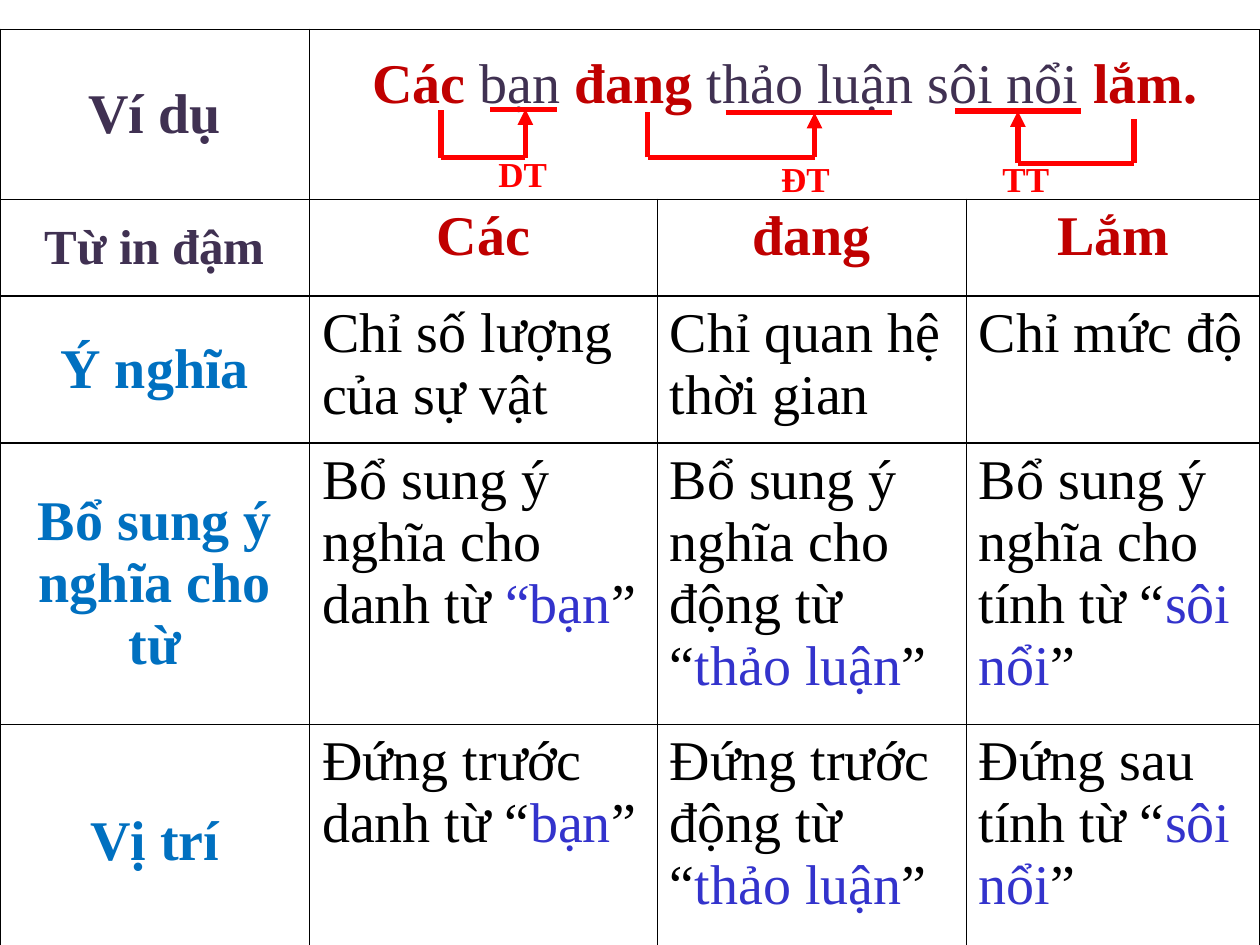
"""Build a slide with a Vietnamese grammar table and linked words in its example."""
from lxml import etree
from pptx import Presentation
from pptx.dml.color import RGBColor
from pptx.enum.shapes import MSO_CONNECTOR
from pptx.enum.text import MSO_ANCHOR, PP_ALIGN
from pptx.oxml.ns import qn
from pptx.util import Cm, Pt

STRAIGHT = MSO_CONNECTOR.STRAIGHT
MIDDLE, TOP = MSO_ANCHOR.MIDDLE, MSO_ANCHOR.TOP
CENTER, LEFT = PP_ALIGN.CENTER, PP_ALIGN.LEFT
FONT = "Times New Roman"
PURPLE, RED, BLUE = "403152", "C00000", "0070C0"
BLACK, QUOTE, MARK = "000000", "3333CC", "FF0000"

COLS = [6.24, 7.01, 6.23, 5.92]
ROWS = [3.43, 1.95, 2.96, 5.67, 4.75]
TABLE_TOP = 0.59
EXAMPLE_BOTTOM = 1.34
HEADS = [("Ví dụ", PURPLE, 32), ("Từ in đậm", PURPLE, 28), ("Ý nghĩa", BLUE, 32),
         ("Bổ sung ý nghĩa cho từ", BLUE, 32), ("Vị trí", BLUE, 32)]
EXAMPLE = "Các |bạn |đang |thảo luận sôi nổi |lắm."
WORDS = ["Các", "đang", "Lắm"]
BODY = [
    ["Chỉ số lượng của sự vật", "Chỉ quan hệ thời gian", "Chỉ mức độ"],
    ["Bổ sung ý nghĩa cho danh từ |“bạn|”", "Bổ sung ý nghĩa cho động từ “|thảo luận|”",
     "Bổ sung ý nghĩa cho tính từ “|sôi nổi|”"],
    ["Đứng trước danh từ “|bạn|”", "Đứng trước động từ “|thảo luận|”",
     "Đứng sau tính từ “|sôi nổi|”"],
]
LINKS = [
    dict(label="DT", box=(9.27, 3.07, 2.54, 0.94), stem=(8.89, 2.21), tip=10.59,
         bar=(9.88, 11.23, 2.2), base=3.18),
    dict(label="ĐT", box=(15.01, 3.18, 2.46, 0.84), stem=(13.06, 2.26), tip=16.42,
         bar=(14.63, 17.98, 2.27), base=3.17),
    dict(label="TT", box=(19.41, 3.18, 2.54, 0.84), stem=(22.86, 2.39), tip=20.52,
         bar=(19.25, 21.79, 2.24), base=3.29),
]


def rgb(value):
    return RGBColor.from_string(value)


def style_run(r, color, size, bold):
    r.font.name, r.font.size, r.font.bold = FONT, Pt(size), bold
    r.font.color.rgb = rgb(color)


def border_cell(cell):
    tcPr = cell._tc.get_or_add_tcPr()
    for side in ("a:lnL", "a:lnR", "a:lnT", "a:lnB"):
        ln = etree.SubElement(tcPr, qn(side), w=str(Pt(1)))
        fill = etree.SubElement(ln, qn("a:solidFill"))
        etree.SubElement(fill, qn("a:srgbClr"), val=BLACK)


def fill_cell(cell, text, styles, size=32, align=CENTER, anchor=MIDDLE):
    cell.vertical_anchor = anchor
    p = cell.text_frame.paragraphs[0]
    p.alignment = align
    for i, part in enumerate(text.split("|")):
        r = p.add_run()
        r.text = part
        color, bold = styles[i % 2]
        style_run(r, color, size, bold)


def add_table(slide):
    table = slide.shapes.add_table(len(ROWS), len(COLS), 0, Cm(TABLE_TOP),
                                   Cm(sum(COLS)), Cm(sum(ROWS))).table
    for col, width in zip(table.columns, COLS):
        col.width = Cm(width)
    for row, height in zip(table.rows, ROWS):
        row.height = Cm(height)
    for cell in table.iter_cells():
        border_cell(cell)
        cell.fill.solid()
        cell.fill.fore_color.rgb = rgb("FFFFFF")
    example = table.cell(0, 1)
    example.merge(table.cell(0, 3))
    example.margin_bottom = Cm(EXAMPLE_BOTTOM)
    fill_cell(example, EXAMPLE, [(RED, True), (PURPLE, False)])
    for i, (text, color, size) in enumerate(HEADS):
        fill_cell(table.cell(i, 0), text, [(color, True)], size)
    for j, word in enumerate(WORDS, 1):
        fill_cell(table.cell(1, j), word, [(RED, True)], anchor=TOP)
    for i, texts in enumerate(BODY, 2):
        for j, text in enumerate(texts, 1):
            fill_cell(table.cell(i, j), text, [(BLACK, False), (QUOTE, False)],
                      align=LEFT, anchor=TOP)


def add_line(shapes, x1, y1, x2, y2, arrow=False):
    line = shapes.add_connector(STRAIGHT, Cm(x1), Cm(y1), Cm(x2), Cm(y2))
    line.line.color.rgb = rgb(MARK)
    line.line.width = Pt(3)
    if arrow:
        etree.SubElement(line.line._get_or_add_ln(), qn("a:tailEnd"), type="triangle")
    etree.SubElement(line._element.spPr, qn("a:effectLst"))


def add_link(slide, label, box, stem, tip, bar, base):
    shapes = slide.shapes.add_group_shape().shapes
    x, top = stem
    left, right, bar_y = bar
    add_line(shapes, x, base, tip, base)
    add_line(shapes, x, base, x, top)
    add_line(shapes, tip, base, tip, bar_y, arrow=True)
    add_line(shapes, left, bar_y, right, bar_y)
    tf = shapes.add_textbox(*map(Cm, box)).text_frame
    tf.word_wrap = True
    tf.margin_left = tf.margin_right = tf.margin_top = tf.margin_bottom = 0
    tf.text = label
    p = tf.paragraphs[0]
    p.alignment = CENTER
    style_run(p.runs[0], MARK, 20, True)


def main():
    prs = Presentation()
    prs.slide_width, prs.slide_height = Cm(25.4), Cm(19.05)
    slide = prs.slides.add_slide(prs.slide_layouts[6])
    add_table(slide)
    for link in LINKS:
        add_link(slide, **link)
    prs.save("out.pptx")


if __name__ == "__main__":
    main()
